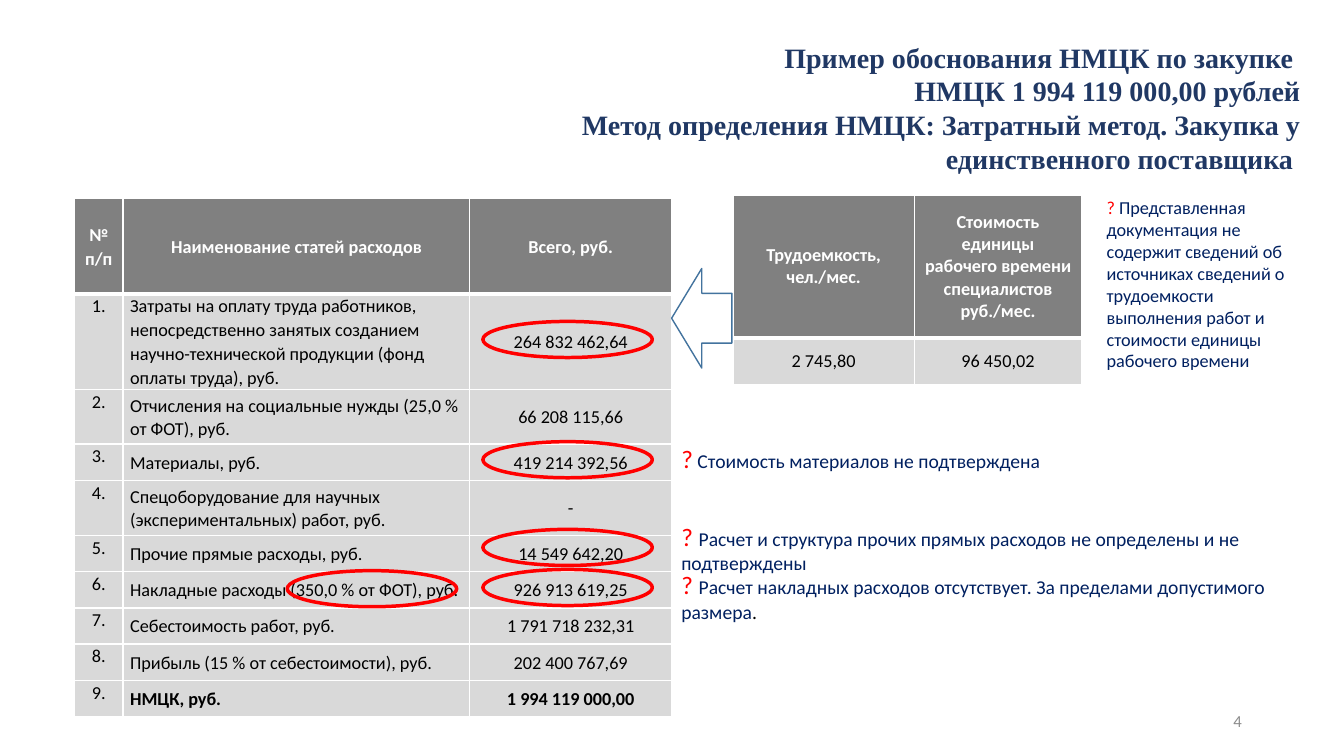
"""Build the slide on justifying the initial contract price with the cost method."""
from lxml.etree import SubElement
from pptx import Presentation
from pptx.dml.color import RGBColor
from pptx.enum.shapes import MSO_SHAPE as Preset
from pptx.enum.text import MSO_ANCHOR as Anchor, MSO_AUTO_SIZE as AutoSize, PP_ALIGN as Align
from pptx.oxml.ns import qn
from pptx.util import Cm, Pt

NAVY, RED, BLACK, WHITE = "002060", "FF0000", "000000", "FFFFFF"


def color(code):
    return RGBColor.from_string(code)


def style(font, size, code, bold=False, name="Calibri"):
    font.size, font.bold, font.name = Pt(size), bold, name
    font.color.rgb = color(code)


deck = Presentation()
deck.slide_width, deck.slide_height = Cm(33.87), Cm(19.05)
page = deck.slides.add_slide(deck.slide_layouts[6])

costs = [
    ("№ п/п", "Наименование статей расходов", "Всего, руб."),
    ("1.", "Затраты на оплату труда работников, непосредственно занятых созданием "
           "научно-технической продукции (фонд оплаты труда), руб.", "264 832 462,64"),
    ("2.", "Отчисления на социальные нужды (25,0 % от ФОТ), руб.", "66 208 115,66"),
    ("3.", "Материалы, руб.", "419 214 392,56"),
    ("4.", "Спецоборудование для научных (экспериментальных) работ, руб.", "-"),
    ("5.", "Прочие прямые расходы, руб.", "14 549 642,20"),
    ("6.", "Накладные расходы (350,0 % от ФОТ), руб.", "926 913 619,25"),
    ("7.", "Себестоимость работ, руб.", "1 791 718 232,31"),
    ("8.", "Прибыль (15 % от себестоимости), руб.", "202 400 767,69"),
    ("9.", "НМЦК, руб.", "1 994 119 000,00"),
]
labor = [
    ("Трудоемкость, чел./мес.", "Стоимость единицы рабочего времени специалистов руб./мес."),
    ("2 745,80", "96 450,02"),
]
tables = [
    (costs, 1.88, 5, [1.22, 8.74, 5.08], [2.41, 2.41, 1.37, 0.91, 1.4] + [0.91] * 5),
    (labor, 18.47, 4.93, [4.57, 4.22], [3.58, 1.19]),
]
for rows, left, top, widths, heights in tables:
    is_costs = rows is costs
    table = page.shapes.add_table(len(rows), len(widths), Cm(left), Cm(top),
                                  Cm(sum(widths)), Cm(sum(heights))).table
    table.horz_banding = False
    for column, width in zip(table.columns, widths):
        column.width = Cm(width)
    for r, (values, height) in enumerate(zip(rows, heights)):
        table.rows[r].height = Cm(height)
        for c, value in enumerate(values):
            cell = table.cell(r, c)
            header = r == 0
            total = is_costs and r == len(rows) - 1 and c > 0
            at_top = is_costs and not header and (c == 0 or (r, c) == (1, 1))
            cell.vertical_anchor = Anchor.TOP if at_top else Anchor.MIDDLE
            cell.text_frame.text = value
            para = cell.text_frame.paragraphs[0]
            para.alignment = Align.LEFT if is_costs and c == 1 and not header else Align.CENTER
            if is_costs:
                cell.margin_left = cell.margin_right = Cm(0.18)
                cell.margin_top = cell.margin_bottom = 0
                para.line_spacing = 1.07
            style(para.runs[0].font, 13, WHITE if header else BLACK, header or total)
            for side in "LRTB":
                width = Pt(3 if header and side == "B" else 1)
                border = SubElement(cell._tc.get_or_add_tcPr(), qn(f"a:ln{side}"), w=str(width))
                SubElement(SubElement(border, qn("a:solidFill")), qn("a:srgbClr"), val=WHITE)
            cell.fill.solid()
            cell.fill.fore_color.rgb = color("808080" if header else "D9D9D9")

title_box = page.shapes.add_textbox(Cm(10.36), Cm(0.89), Cm(22.66), Cm(3.68))
title_box.text_frame.word_wrap = True
title_box.text_frame.auto_size = AutoSize.SHAPE_TO_FIT_TEXT
title_box.text_frame.text = "\n".join([
    "Пример обоснования НМЦК по закупке ",
    "НМЦК 1 994 119 000,00 рублей",
    "Метод определения НМЦК: Затратный метод. Закупка у единственного поставщика ",
])
for para in title_box.text_frame.paragraphs:
    para.alignment = Align.RIGHT
    style(para.runs[0].font, 20, "203864", True, "Times New Roman")

remarks = [
    (27.64, 4.83, 5.38, 4.7, [
        ("? ", 13, RED),
        ("Представленная документация не содержит сведений об источниках сведений о "
         "трудоемкости выполнения работ и стоимости единицы рабочего времени", 13, NAVY)]),
    (16.92, 11.05, 15.11, 1.02, [
        ("?", 18, RED), (" ", 14, BLACK), ("Стоимость материалов не подтверждена", 14, NAVY)]),
    (16.92, 13, 17.7, 1.63, [
        ("? ", 18, RED),
        ("Расчет и структура прочих прямых расходов не определены и не подтверждены", 14, NAVY)]),
    (16.92, 14.22, 16.94, 1.63, [
        ("? ", 18, RED),
        ("Расчет накладных расходов отсутствует. За пределами допустимого размера", 14, NAVY),
        (".", 14, BLACK)]),
]
for left, top, width, height, spans in remarks:
    box = page.shapes.add_textbox(Cm(left), Cm(top), Cm(width), Cm(height))
    box.text_frame.word_wrap = True
    box.text_frame.auto_size = AutoSize.SHAPE_TO_FIT_TEXT
    for text, size, code in spans:
        span = box.text_frame.paragraphs[0].add_run()
        span.text = text
        style(span.font, size, code)

outlines = [(Preset.DOWN_ARROW, 16.43, 7.26, 2.51, 1.52, 90, "43739E", 1)]
for left, top in [(7.24, 14.38), (12.17, 14.35), (12.17, 11.13), (12.17, 13.34), (12.17, 8.1)]:
    outlines.append((Preset.OVAL, left, top, 4.27, 0.91, 0, RED, 2.5))
for preset, left, top, width, height, angle, code, weight in outlines:
    shape = page.shapes.add_shape(preset, Cm(left), Cm(top), Cm(width), Cm(height))
    shape.rotation = angle
    shape.shadow.inherit = False
    shape.fill.background()
    shape.line.color.rgb = color(code)
    shape.line.width = Pt(weight)

number_box = page.shapes.add_textbox(Cm(23.93), Cm(17.65), Cm(7.62), Cm(1.02))
number_box.text_frame.word_wrap = True
number_box.text_frame.vertical_anchor = Anchor.MIDDLE
number_box.text_frame.text = "4"
number = number_box.text_frame.paragraphs[0]
number.alignment = Align.RIGHT
style(number.runs[0].font, 12, "8C8C8C")

deck.save("out.pptx")
